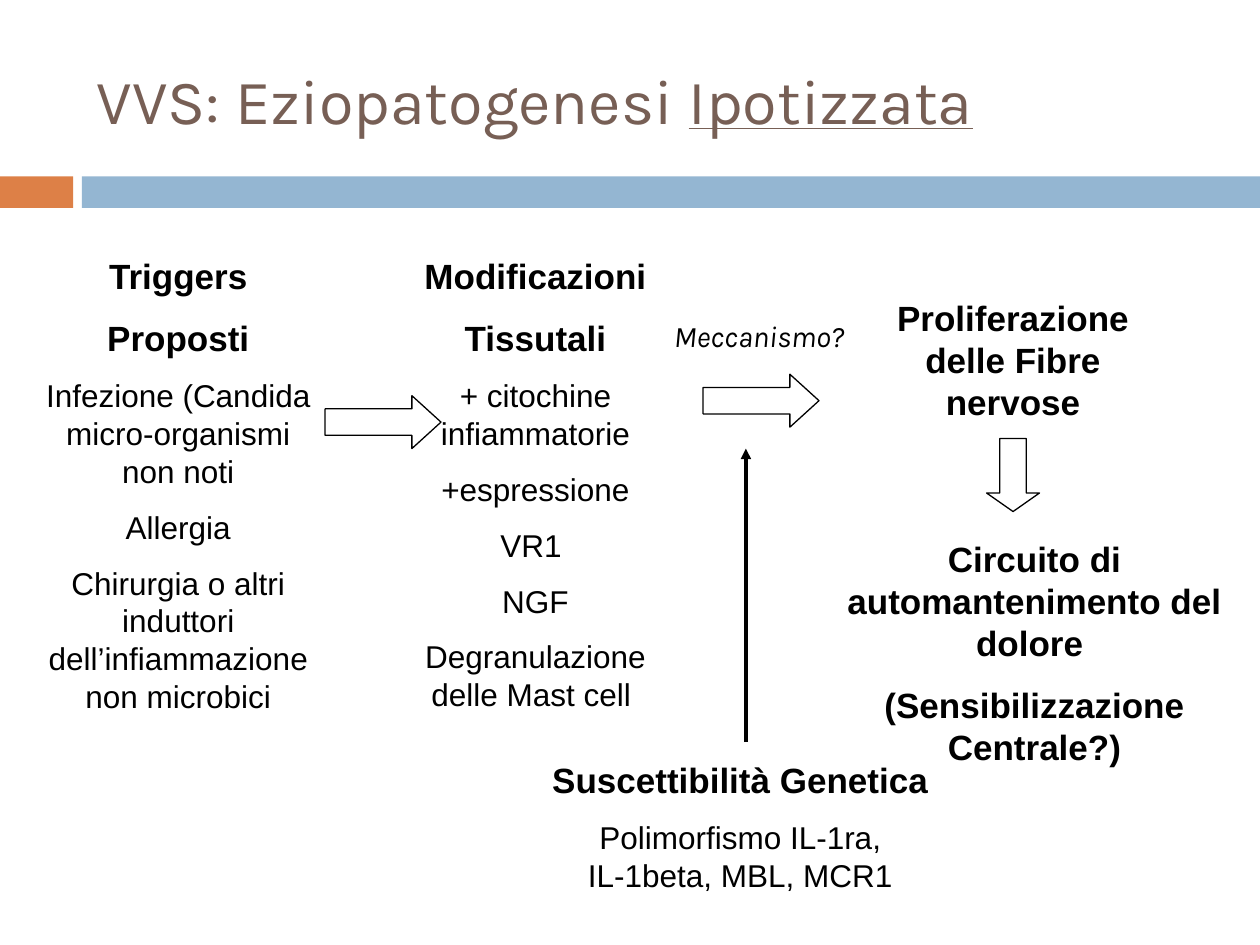
from lxml.etree import SubElement
from pptx import Presentation
from pptx.dml.color import RGBColor
from pptx.enum.shapes import MSO_CONNECTOR as Line, MSO_SHAPE as Shape
from pptx.enum.text import MSO_ANCHOR as Anchor, PP_ALIGN as Align
from pptx.oxml.ns import qn
from pptx.util import Inches, Pt

BLACK = RGBColor(0x00, 0x00, 0x00)
BROWN = RGBColor(0x77, 0x5F, 0x55)
ORANGE = RGBColor(0xDD, 0x80, 0x47)
BLUE = RGBColor(0x94, 0xB6, 0xD2)
HEADING_SIZE = 20
BODY_SIZE = 18
SPACING_RATIO = 0.57


def add_span(para, text, size=BODY_SIZE, font="Arial", color=BLACK,
             bold=False, italic=False, underline=False):
    span = para.add_run()
    span.text = text
    span.font.size = Pt(size)
    span.font.name = font
    span.font.color.rgb = color
    span.font.bold = bold
    span.font.italic = italic
    span.font.underline = underline


class SlideBuilder:
    def __init__(self, page):
        self.shapes = page.shapes

    def text_box(self, left, top, width, height, anchor=Anchor.TOP):
        box = self.shapes.add_textbox(
            Inches(left), Inches(top), Inches(width), Inches(height))
        frame = box.text_frame
        frame.word_wrap = True
        frame.vertical_anchor = anchor
        return frame

    def title(self, left, top, width, height, plain, underlined):
        para = self.text_box(left, top, width, height, Anchor.MIDDLE).paragraphs[0]
        style = dict(size=36, font="Karla", color=BROWN)
        add_span(para, plain, **style)
        add_span(para, underlined, underline=True, **style)

    def label(self, left, top, width, height, text):
        para = self.text_box(left, top, width, height).paragraphs[0]
        add_span(para, text, size=17, font="Karla", italic=True)

    def block(self, left, top, width, height, headings, details=()):
        frame = self.text_box(left, top, width, height)
        lines = [(text, HEADING_SIZE, True) for text in headings]
        lines += [(text, BODY_SIZE, False) for text in details]
        for index, (text, size, bold) in enumerate(lines):
            para = frame.add_paragraph() if index else frame.paragraphs[0]
            para.alignment = Align.CENTER
            para.space_before = Pt(round(size * SPACING_RATIO, 1) if index else 0)
            add_span(para, text, size=size, bold=bold)

    def shape(self, kind, left, top, width, height):
        shape = self.shapes.add_shape(
            kind, Inches(left), Inches(top), Inches(width), Inches(height))
        shape.shadow.inherit = False
        return shape

    def bar(self, left, width, color):
        bar = self.shape(Shape.RECTANGLE, left, 1.4, width, 0.25)
        bar.fill.solid()
        bar.fill.fore_color.rgb = color
        bar.line.fill.background()

    def block_arrow(self, left, top, width=0.92, head=0.55, rotation=0):
        arrow = self.shape(Shape.RIGHT_ARROW, left, top, width, 0.42)
        arrow.adjustments[0] = 0.5
        arrow.adjustments[1] = head
        arrow.rotation = rotation
        arrow.fill.background()
        arrow.line.color.rgb = BLACK
        arrow.line.width = Pt(0.75)

    def line_arrow(self, x, start, end):
        arrow = self.shapes.add_connector(
            Line.STRAIGHT, Inches(x), Inches(start), Inches(x), Inches(end))
        arrow.line.color.rgb = BLACK
        arrow.line.width = Pt(2)
        SubElement(arrow.line._get_or_add_ln(), qn("a:tailEnd"), type="triangle")
        SubElement(arrow._element.spPr, qn("a:effectLst"))


def main():
    deck = Presentation()
    deck.slide_width, deck.slide_height = Inches(10), Inches(7.5)
    builder = SlideBuilder(deck.slides.add_slide(deck.slide_layouts[6]))

    builder.bar(0, 0.58, ORANGE)
    builder.bar(0.65, 9.35, BLUE)
    builder.title(0.67, 0.25, 8.92, 1.08, "VVS: Eziopatogenesi ", "Ipotizzata")

    builder.block(0.25, 1.97, 2.33, 4.24, ["Triggers", "Proposti"], [
        "Infezione (Candida micro-organismi non noti",
        "Allergia",
        "Chirurgia o altri induttori dell’infiammazione non microbici",
    ])
    builder.block(3.25, 1.97, 2, 4.24, ["Modificazioni ", "Tissutali"], [
        "+ citochine infiammatorie",
        "+espressione",
        "VR1 ",
        "NGF",
        "Degranulazione delle Mast cell ",
    ])
    builder.block(7, 1.97, 2.08, 1.43, [" Proliferazione delle Fibre nervose"])
    builder.block(6.5, 4.22, 3.42, 1.93, [
        "Circuito di automantenimento del dolore ",
        "(Sensibilizzazione Centrale?)",
    ])
    builder.block(4.25, 5.97, 3.25, 1.19, ["Suscettibilità Genetica"],
                  ["Polimorfismo IL-1ra, IL-1beta, MBL, MCR1"])
    builder.label(5.25, 2.47, 1.67, 0.38, "Meccanismo?")

    builder.block_arrow(2.58, 3.14)
    builder.block_arrow(5.58, 2.97)
    builder.block_arrow(7.75, 3.56, width=0.58, head=0.35, rotation=90)
    builder.line_arrow(5.92, 5.89, 3.56)

    deck.save("out.pptx")


if __name__ == "__main__":
    main()
